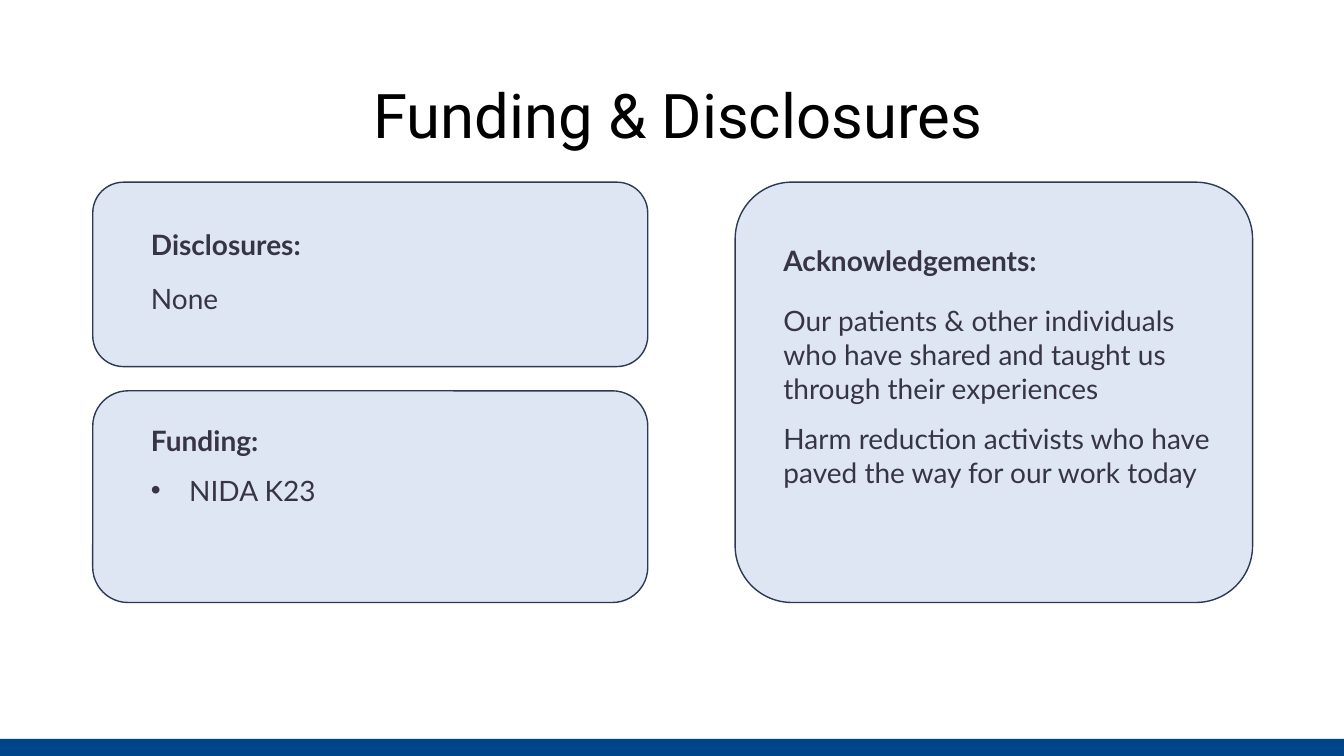
from lxml import etree
from pptx import Presentation
from pptx.dml.color import RGBColor
from pptx.enum.shapes import MSO_SHAPE
from pptx.enum.text import MSO_ANCHOR, PP_ALIGN
from pptx.oxml.ns import qn
from pptx.util import Inches, Pt

ROUND, RECT = MSO_SHAPE.ROUNDED_RECTANGLE, MSO_SHAPE.RECTANGLE
MIDDLE, CENTER = MSO_ANCHOR.MIDDLE, PP_ALIGN.CENTER
PALE = RGBColor(0xDF, 0xE6, 0xF3)
NAVY = RGBColor(0x2B, 0x39, 0x55)
BLUE = RGBColor(0x00, 0x45, 0x8A)
INK = RGBColor(0x37, 0x35, 0x45)
BLACK = RGBColor(0, 0, 0)
WIDE, HIGH = Inches(13.33), Inches(7.5)
PAGE = (0, 0, WIDE, HIGH)


def part(box, x, y, w, h):
    """Return the part of box given in percent of its size."""
    left, top, wide, high = box
    return (int(left + wide * x / 100), int(top + high * y / 100),
            int(wide * w / 100), int(high * h / 100))


def add_panel(slide, kind, box, fill):
    panel = slide.shapes.add_shape(kind, *box)
    panel.shadow.inherit = False
    panel.fill.solid()
    panel.fill.fore_color.rgb = fill
    return panel


def add_text(slide, box):
    frame = slide.shapes.add_textbox(*box).text_frame
    frame.word_wrap = True
    return frame


def style(para, font, size, color, bold=False):
    for run in para.runs:
        run.font.name = font
        run.font.size = Pt(size)
        run.font.color.rgb = color
        run.font.bold = bold


def add_bullet(para):
    props = para._p.get_or_add_pPr()
    props.set("marL", str(Inches(0.38)))
    props.set("indent", str(-Inches(0.38)))
    etree.SubElement(props, qn("a:buFont")).set("typeface", "Arial")
    etree.SubElement(props, qn("a:buChar")).set("char", "•")


def add_title(slide, box, text):
    frame = add_text(slide, box)
    frame.vertical_anchor = MIDDLE
    para = frame.paragraphs[0]
    para.text = text
    para.alignment = CENTER
    para.line_spacing = 0.9
    style(para, "Roboto", 44, BLACK)


def add_card(slide, box, inner, head, lines, gap, space=0, bullet=False, curve=0.167):
    """Draw a rounded card with a bold head and lines in its inner part."""
    card = add_panel(slide, ROUND, box, PALE)
    card.adjustments[0] = curve
    card.line.color.rgb = NAVY
    card.line.width = Pt(1)

    frame = add_text(slide, part(box, *inner))
    first = frame.paragraphs[0]
    first.text = head
    first.space_after = Pt(gap)
    style(first, "Lato", 20, INK, True)
    for line in lines:
        para = frame.add_paragraph()
        para.text = line
        if space:
            para.space_before = para.space_after = Pt(space)
        if bullet:
            add_bullet(para)
        style(para, "Lato", 20, INK)


def main():
    deck = Presentation()
    deck.slide_width, deck.slide_height = WIDE, HIGH
    slide = deck.slides.add_slide(deck.slide_layouts[6])

    add_title(slide, part(PAGE, 7.3, 6, 86.3, 19.3), "Funding & Disclosures")
    add_card(slide, part(PAGE, 6.9, 24.1, 41.3, 24.4), (8.7, 21.9, 68, 53.6),
             "Disclosures:", ["None"], 14.4)
    add_card(slide, part(PAGE, 6.9, 51.7, 41.3, 28), (8.7, 12.9, 85.7, 44.8),
             "Funding:", ["NIDA K23"], 12, bullet=True)
    add_card(slide, part(PAGE, 54.7, 24.1, 38.5, 55.6), (7.4, 13.4, 86.6, 73.4),
             "Acknowledgements:",
             ["Our patients & other individuals who have shared and taught us "
              "through their experiences",
              "Harm reduction activists who have paved the way for our work today"],
             13.2, space=6, curve=0.135)
    footer = add_panel(slide, RECT, part(PAGE, 0, 97.75, 100, 2.25), BLUE)
    footer.line.fill.background()

    deck.save("out.pptx")


if __name__ == "__main__":
    main()
